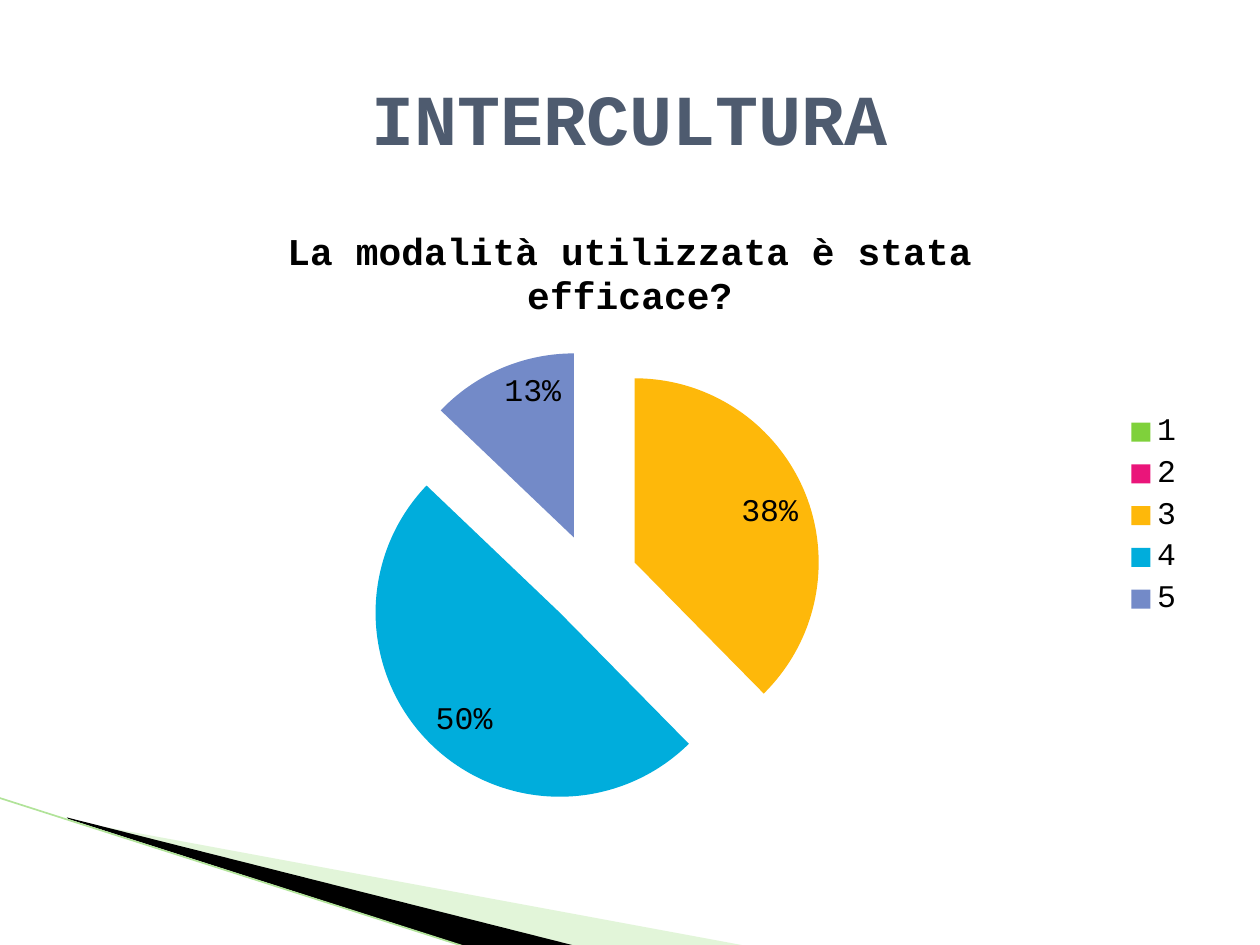
from pptx import Presentation
from pptx.chart.data import CategoryChartData
from pptx.dml.color import RGBColor
from pptx.enum.chart import XL_CHART_TYPE, XL_LABEL_POSITION, XL_LEGEND_POSITION
from pptx.enum.shapes import MSO_CONNECTOR
from pptx.enum.text import MSO_ANCHOR, PP_ALIGN
from pptx.oxml.xmlchemy import OxmlElement
from pptx.util import Cm, Pt

FONT = "Courier New"
COLORS = {
    "text": "000000", "title": "4E5B6F",
    "pale": "B8E7A1", "dark": "000000", "edge": "B1E399",
    "slices": ["7FD13B", "EA157A", "FEB80A", "00ADDC", "738AC8"],
}


def rgb(value):
    return RGBColor.from_string(value)


def style_font(font, size, color, bold=False):
    font.name, font.size, font.bold = FONT, Pt(size), bold
    font.color.rgb = rgb(color)


def add_wedge(s, left, top, points, color, opacity=None):
    """Draw a filled polygon; points are in cm from left, top."""
    (x0, y0), *rest = [(Cm(left + x), Cm(top + y)) for x, y in points]
    builder = s.shapes.build_freeform(x0, y0)
    builder.add_line_segments(rest, close=True)
    sp = builder.convert_to_shape()
    sp.shadow.inherit = False
    sp.fill.solid()
    sp.fill.fore_color.rgb = rgb(color)
    sp.line.fill.background()
    if opacity is not None:
        alpha = OxmlElement("a:alpha")
        alpha.set("val", str(opacity * 1000))
        sp.fill._xPr.find(".//{*}srgbClr").append(alpha)


def add_corner(s, left, top):
    """Wedges and edge line in the lower left corner."""
    add_wedge(s, left + 1.4, top + 0.43,
              [(0, 0.03), (13.71, 2.57), (10.19, 2.57), (0, 0)], COLORS["pale"], 40)
    add_wedge(s, left + 1.35, top + 0.4,
              [(0, 0), (10.26, 2.59), (8.1, 2.62), (0.03, 0.03)], COLORS["dark"])
    edge = s.shapes.add_connector(MSO_CONNECTOR.STRAIGHT, Cm(left - 0.03), Cm(top),
                                  Cm(left + 9.42), Cm(top + 3.02))
    edge.line.color.rgb = rgb(COLORS["edge"])
    edge.line.width = Pt(0.95)
    edge._element.spPr.append(OxmlElement("a:effectLst"))


def add_title(s, left, top, width, height):
    tf = s.shapes.add_textbox(Cm(left), Cm(top), Cm(width), Cm(height)).text_frame
    tf.word_wrap = True
    tf.vertical_anchor = MSO_ANCHOR.MIDDLE
    tf.text = "INTERCULTURA"
    p = tf.paragraphs[0]
    p.alignment = PP_ALIGN.CENTER
    style_font(p.runs[0].font, 41, COLORS["title"], True)


def add_pie(s, left, top, width, height):
    question = "La modalità utilizzata è stata efficace?"
    data = CategoryChartData()
    data.categories = ["1", "2", "3", "4", "5"]
    data.add_series(question, [None, None, 38, 50, 13])
    chart = s.shapes.add_chart(XL_CHART_TYPE.PIE, Cm(left), Cm(top),
                               Cm(width), Cm(height), data).chart
    style_font(chart.font, 18, COLORS["text"])

    # Chart title and legend
    chart.has_title = True
    tf = chart.chart_title.text_frame
    tf.text = question
    style_font(tf.paragraphs[0].runs[0].font, 21.6, COLORS["text"], True)
    chart.chart_title.include_in_layout = False
    chart.has_legend = True
    chart.legend.position = XL_LEGEND_POSITION.RIGHT
    chart.legend.include_in_layout = False
    style_font(chart.legend.font, 18, COLORS["text"])

    # Slices, pulled apart
    plot = chart.plots[0]
    plot.vary_by_categories = True
    series = plot.series[0]
    explosion = OxmlElement("c:explosion")
    explosion.set("val", "25")
    series._element.find("{*}tx").addnext(explosion)
    for i, color in enumerate(COLORS["slices"]):
        fill = series.points[i].format.fill
        fill.solid()
        fill.fore_color.rgb = rgb(color)

    # Percentages
    plot.has_data_labels = True
    labels = plot.data_labels
    labels.show_percentage = True
    labels.show_value = False
    labels.number_format = "0%"
    labels.number_format_is_linked = False
    labels.position = XL_LABEL_POSITION.INSIDE_END
    style_font(labels.font, 18, COLORS["text"])


def main():
    prs = Presentation()
    prs.slide_width, prs.slide_height = Cm(25.4), Cm(19.05)
    s = prs.slides.add_slide(prs.slide_layouts[6])
    add_corner(s, 0, 16.08)
    add_pie(s, 1.27, 4.11, 22.86, 12.57)
    add_title(s, 1.27, 0.76, 22.86, 3.18)
    prs.save("out.pptx")


if __name__ == "__main__":
    main()
